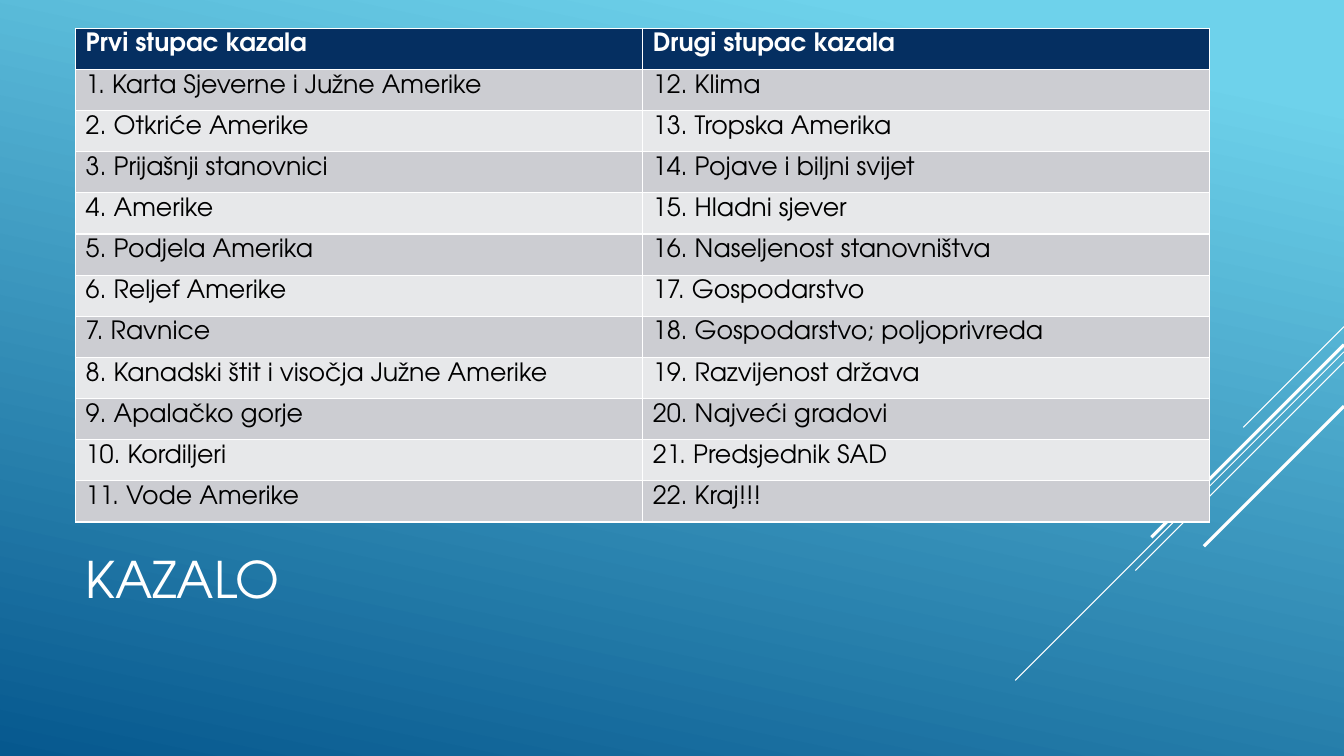
import pptx
import pptx.util
import pptx.dml.color
import pptx.enum.shapes
import pptx.enum.text
import pptx.oxml

Inches = pptx.util.Inches
RGBColor = pptx.dml.color.RGBColor
WHITE = RGBColor(0xFF, 0xFF, 0xFF)
BLACK = RGBColor(0, 0, 0)
NAVY = RGBColor(0x05, 0x2F, 0x61)
SKY = RGBColor(0x6E, 0xD2, 0xEB)
OCEAN = RGBColor(0x06, 0x58, 0x8E)
BANDS = [RGBColor(0xE7, 0xE8, 0xEA), RGBColor(0xCC, 0xCD, 0xD2)]

LEFT = [
    "Prvi stupac kazala",
    "1. Karta Sjeverne i Južne Amerike",
    "2. Otkriće Amerike",
    "3. Prijašnji stanovnici",
    "4. Amerike",
    "5. Podjela Amerika",
    "6. Reljef Amerike",
    "7. Ravnice",
    "8. Kanadski štit i visočja Južne Amerike",
    "9. Apalačko gorje",
    "10. Kordiljeri",
    "11. Vode Amerike",
]
RIGHT = [
    "Drugi stupac kazala",
    "12. Klima",
    "13. Tropska Amerika",
    "14. Pojave i biljni svijet",
    "15. Hladni sjever",
    "16. Naseljenost stanovništva",
    "17. Gospodarstvo",
    "18. Gospodarstvo; poljoprivreda",
    "19. Razvijenost država",
    "20. Najveći gradovi",
    "21. Predsjednik SAD",
    "22. Kraj!!!",
]
EDGE = 13.33
RAYS = [(3.24, 1, 0.75), (3.49, 3.26, 0.75), (3.59, 2.07, 0.75),
        (3.42, 1.91, 2.25), (4.03, 1.39, 2.25)]


def write(frame, text, size=18, color=BLACK, bold=False):
    para = frame.paragraphs[0]
    para.alignment = pptx.enum.text.PP_ALIGN.LEFT
    run = para.add_run()
    run.text = text
    run.font.name = "TeX Gyre Adventor"
    run.font.size = pptx.util.Pt(size)
    run.font.bold = bold
    run.font.color.rgb = color


class Deck:
    def __init__(self):
        self.show = pptx.Presentation()
        self.show.slide_width = Inches(EDGE)
        self.show.slide_height = Inches(7.5)
        self.slide = self.show.slides.add_slide(self.show.slide_layouts[5])

    def backdrop(self):
        fill = self.slide.background.fill
        fill.gradient()
        fill.gradient_angle = 360 - 102
        for stop, color, place in zip(fill.gradient_stops, (SKY, OCEAN), (0.1, 1)):
            stop.color.rgb = color
            stop.position = place

    def ray(self, top, span, width):
        line = self.slide.shapes.add_connector(
            pptx.enum.shapes.MSO_CONNECTOR.STRAIGHT,
            Inches(EDGE), Inches(top), Inches(EDGE - span), Inches(top + span))
        line.line.color.rgb = WHITE
        line.line.width = pptx.util.Pt(width)
        props = line._element.spPr
        props.append(pptx.oxml.parse_xml(
            '<a:effectLst xmlns:a="http://schemas.openxmlformats.org/drawingml/2006/main"/>'))

    def title(self, text, left, top, width, height):
        box = self.slide.shapes.title
        box.left, box.top = Inches(left), Inches(top)
        box.width, box.height = Inches(width), Inches(height)
        box.text_frame.vertical_anchor = pptx.enum.text.MSO_ANCHOR.MIDDLE
        write(box.text_frame, text, size=36, color=WHITE)

    def table(self, rows, left, top, width, height):
        grid = self.slide.shapes.add_table(
            len(rows), len(rows[0]), Inches(left), Inches(top),
            Inches(width), Inches(height)).table
        for i, row in enumerate(rows):
            head = i == 0
            for j, text in enumerate(row):
                cell = grid.cell(i, j)
                cell.fill.solid()
                cell.fill.fore_color.rgb = NAVY if head else BANDS[i % 2]
                write(cell.text_frame, text, color=WHITE if head else BLACK, bold=head)


def main():
    deck = Deck()
    deck.backdrop()
    for ray in RAYS:
        deck.ray(*ray)
    deck.title("KAZALO", 0.75, 4.91, 9.33, 1.65)
    deck.table(list(zip(LEFT, RIGHT)), 0.75, 0.28, 11.25, 4.9)
    deck.show.save("out.pptx")


if __name__ == "__main__":
    main()
